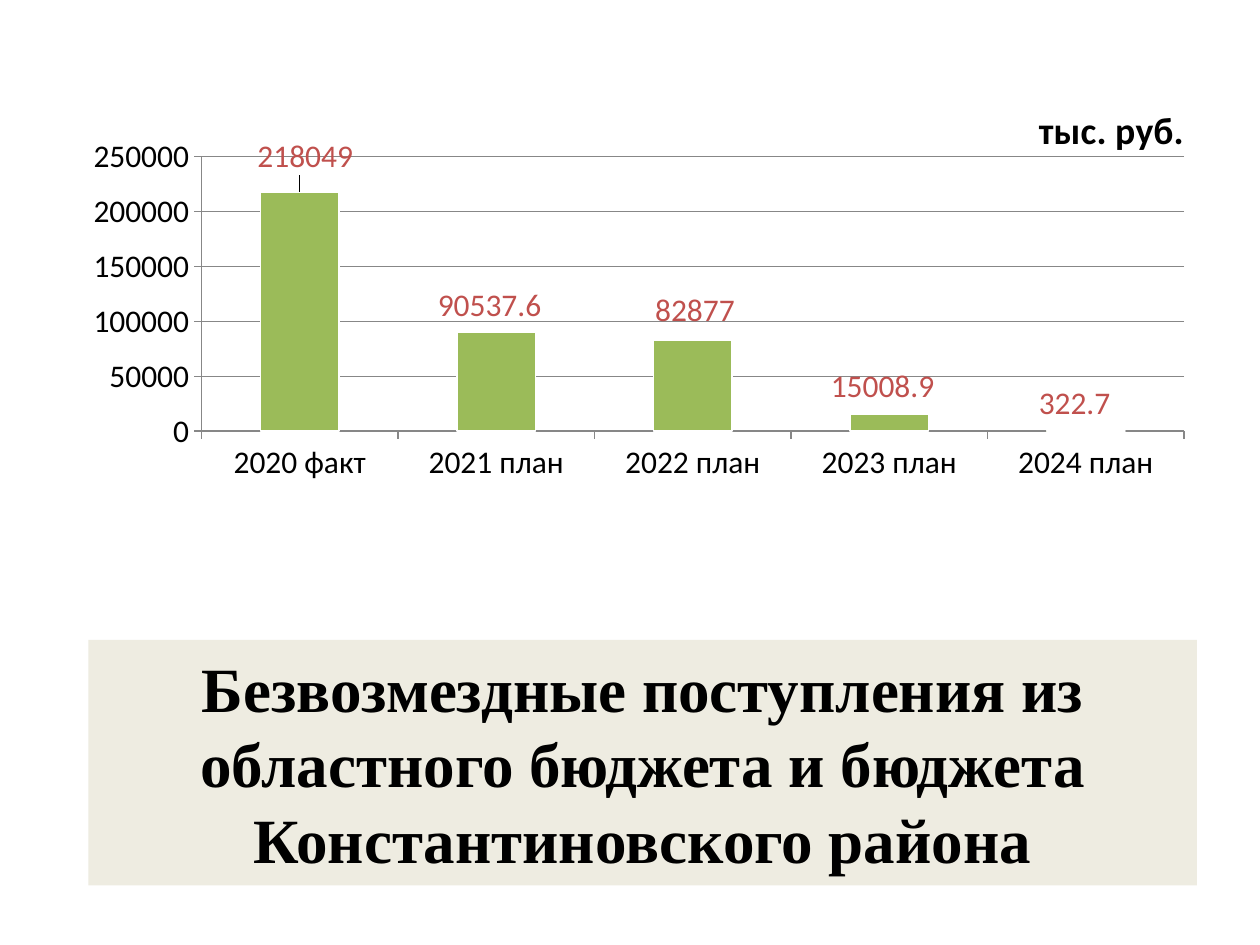
import dataclasses
import typing

import lxml.etree
import pptx
import pptx.chart.data
import pptx.dml.color
import pptx.enum.chart
import pptx.enum.text
import pptx.oxml
import pptx.oxml.ns
import pptx.util

Cm = pptx.util.Cm
Pt = pptx.util.Pt
qn = pptx.oxml.ns.qn


@dataclasses.dataclass(frozen=True)
class Theme:
    text: str = "000000"
    panel: str = "EEECE1"
    bar: str = "9BBB59"
    bar_edge: str = "FFFFFF"
    value: str = "C0504D"
    rule: str = "878787"
    heading_font: str = "Times New Roman"
    chart_font: str = "Calibri"
    heading_size: float = 36
    unit_size: float = 21.6
    chart_size: float = 18


@dataclasses.dataclass(frozen=True)
class Receipt:
    """One year's receipts; the shift moves its label, in shares of the chart."""
    year: str
    amount: float
    shift: tuple[float, float]


THEME = Theme()
HEADING = "Безвозмездные поступления из областного бюджета и бюджета Константиновского района"
RECEIPTS = (
    Receipt("2020 факт", 218049, (0.005, -0.02)),
    Receipt("2021 план", 90537.6, (-0.006, -0.005)),
    Receipt("2022 план", 82877, (0.002, -0.01)),
    Receipt("2023 план", 15008.9, (-0.006, -0.007)),
    Receipt("2024 план", 322.7, (-0.01, -0.007)),
)


def rgb(colour: str) -> pptx.dml.color.RGBColor:
    return pptx.dml.color.RGBColor.from_string(colour)


def apply(target: typing.Any, values: dict[str, typing.Any]) -> None:
    for name, value in values.items():
        setattr(target, name, value)


def format_font(font: typing.Any, face: str, size: float, colour: str, bold: bool = False) -> None:
    apply(font, {"name": face, "size": Pt(size), "bold": bold})
    font.color.rgb = rgb(colour)


def format_line(line: typing.Any, colour: str, width: float) -> None:
    line.color.rgb = rgb(colour)
    line.width = Pt(width)


def manual_layout(**settings: typing.Any) -> typing.Any:
    layout = pptx.oxml.parse_xml(f'<c:layout xmlns:c="{pptx.oxml.ns.nsuri("c")}"/>')
    manual = lxml.etree.SubElement(layout, qn("c:manualLayout"))
    for name, value in settings.items():
        lxml.etree.SubElement(manual, qn(f"c:{name}")).set("val", str(value))
    return layout


def place(owner: typing.Any, position: int, layout: typing.Any) -> None:
    """Put the layout among the owner's children in place of any earlier one."""
    for earlier in owner.findall(qn("c:layout")):
        owner.remove(earlier)
    owner.insert(position, layout)


def add_heading(slide: typing.Any) -> None:
    heading = slide.shapes.title
    apply(heading, {"left": Cm(1.78), "top": Cm(12.9), "width": Cm(22.35), "height": Cm(4.95)})
    heading.fill.solid()
    heading.fill.fore_color.rgb = rgb(THEME.panel)
    frame = heading.text_frame
    frame.text = HEADING
    apply(frame, {"word_wrap": True,
                  "auto_size": pptx.enum.text.MSO_AUTO_SIZE.NONE,
                  "vertical_anchor": pptx.enum.text.MSO_ANCHOR.MIDDLE})
    paragraph = frame.paragraphs[0]
    paragraph.alignment = pptx.enum.text.PP_ALIGN.CENTER
    format_font(paragraph.runs[0].font, THEME.heading_font, THEME.heading_size, THEME.text, True)


def format_axes(chart: typing.Any) -> None:
    for axis in (chart.category_axis, chart.value_axis):
        apply(axis, {"major_tick_mark": pptx.enum.chart.XL_TICK_MARK.OUTSIDE,
                     "minor_tick_mark": pptx.enum.chart.XL_TICK_MARK.NONE})
        format_font(axis.tick_labels.font, THEME.chart_font, THEME.chart_size, THEME.text)
        format_line(axis.format.line, THEME.rule, 0.75)
    apply(chart.value_axis, {"minimum_scale": 0, "maximum_scale": 250000,
                             "major_unit": 50000, "has_major_gridlines": True})
    format_line(chart.value_axis.major_gridlines.format.line, THEME.rule, 0.75)


def format_bars(chart: typing.Any) -> None:
    plot = chart.plots[0]
    apply(plot, {"gap_width": 150, "vary_by_categories": False})
    bars = plot.series[0]
    bars.format.fill.solid()
    bars.format.fill.fore_color.rgb = rgb(THEME.bar)
    format_line(bars.format.line, THEME.bar_edge, 1)

    above = pptx.enum.chart.XL_LABEL_POSITION.OUTSIDE_END
    amounts = bars.data_labels
    apply(amounts, {"show_value": True, "position": above})
    format_font(amounts.font, THEME.chart_font, THEME.chart_size, THEME.value)
    for index in range(len(RECEIPTS)):
        amount = bars.points[index].data_label
        amount.position = above
        format_font(amount.font, THEME.chart_font, THEME.chart_size, THEME.value)
    labels = bars.data_labels._element.findall(qn("c:dLbl"))
    for label, receipt in zip(labels, RECEIPTS):
        across, down = receipt.shift
        place(label, 1, manual_layout(x=across, y=down))


def add_receipts_chart(slide: typing.Any) -> None:
    receipts = pptx.chart.data.CategoryChartData()
    receipts.categories = [receipt.year for receipt in RECEIPTS]
    receipts.add_series("Series 1", [receipt.amount for receipt in RECEIPTS])
    chart = slide.shapes.add_chart(
        pptx.enum.chart.XL_CHART_TYPE.COLUMN_CLUSTERED,
        Cm(1.45), Cm(1.27), Cm(22.56), Cm(11.18), receipts).chart
    apply(chart, {"has_legend": False, "has_title": True})
    format_font(chart.font, THEME.chart_font, THEME.chart_size, THEME.text)

    unit = chart.chart_title
    unit.text_frame.text = "тыс. руб."
    unit.include_in_layout = False
    format_font(unit.text_frame.paragraphs[0].runs[0].font,
                THEME.chart_font, THEME.unit_size, THEME.text, True)
    place(unit._element, 1, manual_layout(xMode="edge", yMode="edge", x=0.86, y=0.06))

    format_axes(chart)
    format_bars(chart)
    plot_area = chart._chartSpace.find(f".//{qn('c:plotArea')}")
    place(plot_area, 0, manual_layout(layoutTarget="inner", xMode="edge", yMode="edge",
                                      x=0.116, y=0.169, w=0.88, h=0.495))


def main() -> None:
    presentation = pptx.Presentation()
    apply(presentation, {"slide_width": Cm(25.4), "slide_height": Cm(19.05)})
    slide = presentation.slides.add_slide(presentation.slide_layouts.get_by_name("Title Only"))
    add_heading(slide)
    add_receipts_chart(slide)
    presentation.save("out.pptx")


if __name__ == "__main__":
    main()
